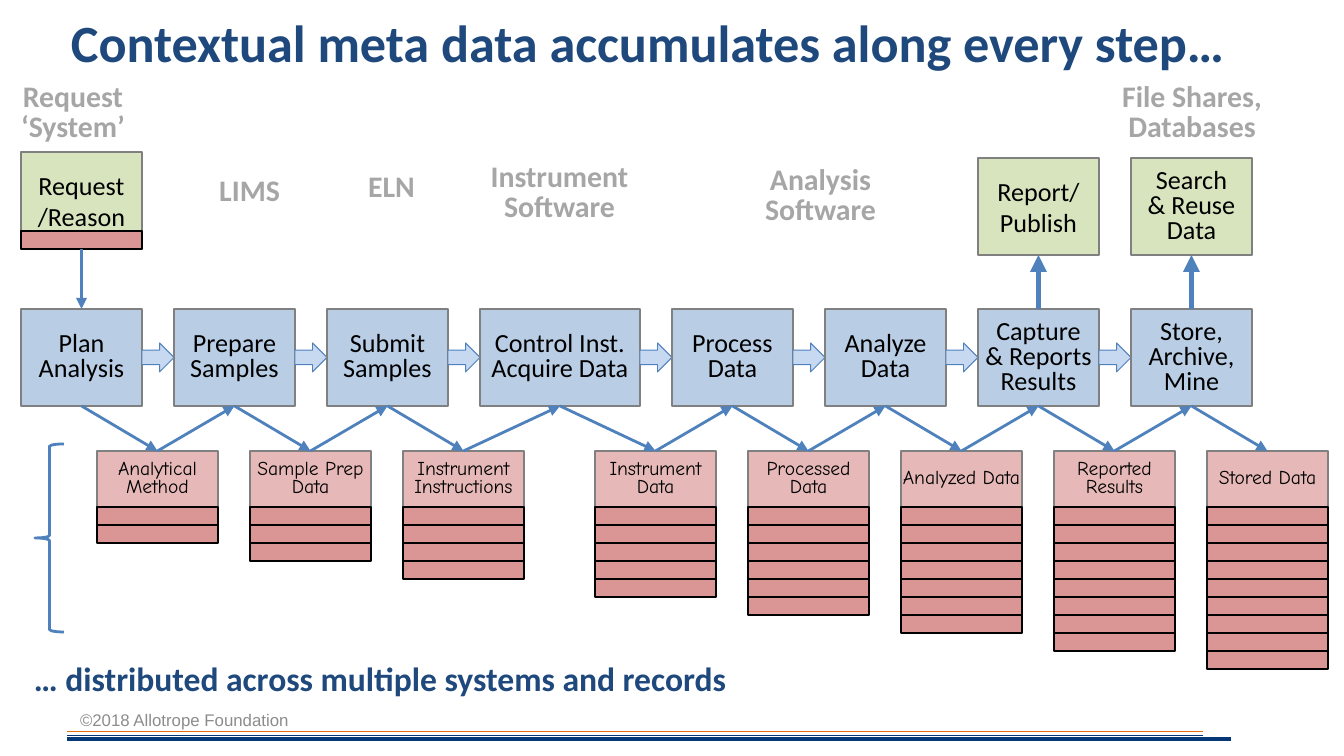
"""Build the slide showing how contextual meta data accumulates along a lab workflow."""
import pptx
import pptx.dml.color
import pptx.enum.shapes
import pptx.enum.text
import pptx.oxml
import pptx.util
from dataclasses import dataclass

SHAPE = pptx.enum.shapes.MSO_SHAPE
ALIGN = pptx.enum.text.PP_ALIGN
ANCHOR = pptx.enum.text.MSO_ANCHOR
NAMESPACE = 'xmlns:a="http://schemas.openxmlformats.org/drawingml/2006/main"'
TOP, BOTTOM = 0, 2


@dataclass(frozen=True)
class Theme:
    navy: str = "1F497D"
    blue: str = "4F81BD"
    step: str = "B9CDE5"
    arrow: str = "C6D9F1"
    green: str = "D7E4BD"
    pink: str = "E6B9B8"
    rose: str = "D99694"
    border: str = "808080"
    label: str = "A6A6A6"
    footer: str = "8C8C8C"
    rule: str = "043877"
    orange: str = "E46C0A"
    black: str = "000000"
    body: str = "Calibri"
    hand: str = "Comic Neue"
    plain: str = "Arial"
    title_size: float = 28
    closing_size: float = 18
    label_size: float = 16
    box_size: float = 14
    record_size: float = 10.5
    footer_size: float = 9


THEME = Theme()
TITLE = "Contextual meta data accumulates along every step…"
CLOSING = "… distributed across multiple systems and records"
FOOTER = "©2018 Allotrope Foundation"
STEPS = [
    ("Plan Analysis", 121, "Analytical Method"),
    ("Prepare Samples", 121, "Sample Prep Data"),
    ("Submit Samples", 121, "Instrument Instructions"),
    ("Control Inst. Acquire Data", 160, "Instrument Data"),
    ("Process Data", 121, "Processed Data"),
    ("Analyze Data", 121, "Analyzed Data"),
    ("Capture & Reports Results", 121, "Reported Results"),
    ("Store, Archive, Mine", 121, "Stored Data"),
]
OUTPUTS = [(6, "Report/Publish", None), (7, "Search & Reuse Data", 0.8)]
SYSTEMS = [
    ("ELN", (310, 161, 163, 50), None),
    ("Instrument Software", (478, 156, 163, 75), 0.85),
    ("File Shares, Databases", (1119, 76, 146, 75), 0.85),
    ("Request ‘System’", (11, 76, 124, 75), 0.85),
    ("LIMS", (168, 165, 163, 50), None),
    ("Analysis Software", (739, 159, 163, 75), 0.85),
]
RULES = [
    (735, 1203, THEME.rule, 0.25),
    (732, 1203, THEME.orange, 0.5),
    (739, 1231, THEME.rule, 2.25),
]
STEP_LEFT, STEP_TOP, BOX_WIDTH, BOX_HEIGHT, STEP_GAP = 21, 309, 121, 97, 32
RECORD_TOP, RECORD_HEIGHT, RECORD_OVERLAP, BAR_HEIGHT = 451, 56, 45, 18
REQUEST_TOP, OUTPUT_TOP, ARROW_HEIGHT = 152, 158, 29

presentation = pptx.Presentation()
presentation.slide_width = pptx.util.Inches(10)
SCALE = presentation.slide_width / 1344


def px(length):
    return pptx.util.Emu(round(length * SCALE))


presentation.slide_height = px(756)
slide = presentation.slides.add_slide(presentation.slide_layouts[6])


def rgb(color):
    return pptx.dml.color.RGBColor.from_string(color)


def write(shape, text, size, color, font=THEME.body, bold=False, align=ALIGN.CENTER,
          anchor=ANCHOR.MIDDLE, spacing=None, side=13):
    frame = shape.text_frame
    frame.word_wrap = True
    frame.vertical_anchor = anchor
    frame.margin_left = frame.margin_right = px(side)
    frame.margin_top = frame.margin_bottom = px(7)
    frame.text = text
    paragraph = frame.paragraphs[0]
    paragraph.alignment = align
    if spacing:
        paragraph.line_spacing = spacing
    run_font = paragraph.runs[0].font
    run_font.name, run_font.size, run_font.bold = font, pptx.util.Pt(size), bold
    run_font.color.rgb = rgb(color)


def add_text(text, place, size, color, **style):
    write(slide.shapes.add_textbox(*map(px, place)), text, size, color, **style)


def add_box(place, fill, line, weight=1, kind=SHAPE.RECTANGLE):
    shape = slide.shapes.add_shape(kind, *map(px, place))
    shape.shadow.inherit = False
    if fill:
        shape.fill.solid()
        shape.fill.fore_color.rgb = rgb(fill)
    else:
        shape.fill.background()
    shape.line.color.rgb = rgb(line)
    shape.line.width = pptx.util.Pt(weight)
    return shape


def add_line(color, weight, ends=(0, 0, 0, 0)):
    line = slide.shapes.add_connector(
        pptx.enum.shapes.MSO_CONNECTOR.STRAIGHT, *map(px, ends))
    line.line.color.rgb = rgb(color)
    line.line.width = pptx.util.Pt(weight)
    line._element.spPr.append(pptx.oxml.parse_xml(f"<a:effectLst {NAMESPACE}/>"))
    return line


def join(start, start_site, end, end_site, weight=1.5):
    line = add_line(THEME.blue, weight)
    line.begin_connect(start, start_site)
    line.end_connect(end, end_site)
    line.line._get_or_add_ln().append(
        pptx.oxml.parse_xml(f'<a:tailEnd {NAMESPACE} type="triangle"/>'))


for y, right, color, weight in RULES:
    add_line(color, weight, (67, y, right, y))

add_text(TITLE, (58, 7, 1210, 78), THEME.title_size, THEME.navy,
         bold=True, align=ALIGN.LEFT, spacing=0.9)

steps, records, lefts = [], [], []
left = STEP_LEFT
for index, (name, width, record_name) in enumerate(STEPS):
    step = add_box((left, STEP_TOP, width, BOX_HEIGHT), THEME.step, THEME.border)
    write(step, name, THEME.box_size, THEME.black, spacing=0.8, side=7)
    right = left + width
    record_left = right - RECORD_OVERLAP
    record = add_box((record_left, RECORD_TOP, BOX_WIDTH, RECORD_HEIGHT),
                     THEME.pink, THEME.border)
    write(record, record_name, THEME.record_size, THEME.black,
          font=THEME.hand, spacing=0.8, side=0)
    for bar in range(index + 2):
        bar_top = RECORD_TOP + RECORD_HEIGHT + bar * BAR_HEIGHT
        add_box((record_left, bar_top, BOX_WIDTH, BAR_HEIGHT), THEME.rose, THEME.black)
    if index < len(STEPS) - 1:
        arrow_top = STEP_TOP + (BOX_HEIGHT - ARROW_HEIGHT) // 2
        add_box((right, arrow_top, STEP_GAP, ARROW_HEIGHT), THEME.arrow, THEME.blue,
                0.5, SHAPE.RIGHT_ARROW)
    steps.append(step)
    records.append(record)
    lefts.append(left)
    left = right + STEP_GAP

for step, record in zip(steps, records):
    join(step, BOTTOM, record, TOP)
for record, step in zip(records, steps[1:]):
    join(record, TOP, step, BOTTOM)

request = add_box((STEP_LEFT, REQUEST_TOP, BOX_WIDTH, BOX_HEIGHT), THEME.green, THEME.border)
write(request, "Request/Reason", THEME.box_size, THEME.black)
add_box((STEP_LEFT, REQUEST_TOP + BOX_HEIGHT - BAR_HEIGHT, BOX_WIDTH, BAR_HEIGHT),
        THEME.rose, THEME.black)
join(request, BOTTOM, steps[0], TOP)

for index, name, spacing in OUTPUTS:
    output = add_box((lefts[index], OUTPUT_TOP, BOX_WIDTH, BOX_HEIGHT),
                     THEME.green, THEME.border, 0.75)
    write(output, name, THEME.box_size, THEME.black, spacing=spacing)
    join(steps[index], TOP, output, BOTTOM, 3)

add_box((35, 444, 29, 188), None, THEME.blue, 1.5, SHAPE.LEFT_BRACE)
for name, place, spacing in SYSTEMS:
    add_text(name, place, THEME.label_size, THEME.label, bold=True,
             anchor=ANCHOR.TOP, spacing=spacing, side=0)
add_text(CLOSING, (21, 655, 874, 50), THEME.closing_size, THEME.navy, bold=True,
         align=ALIGN.LEFT, anchor=ANCHOR.TOP, spacing=0.9)
add_text(FOOTER, (67, 700, 313, 40), THEME.footer_size, THEME.footer,
         font=THEME.plain, align=ALIGN.LEFT)

presentation.save("out.pptx")
